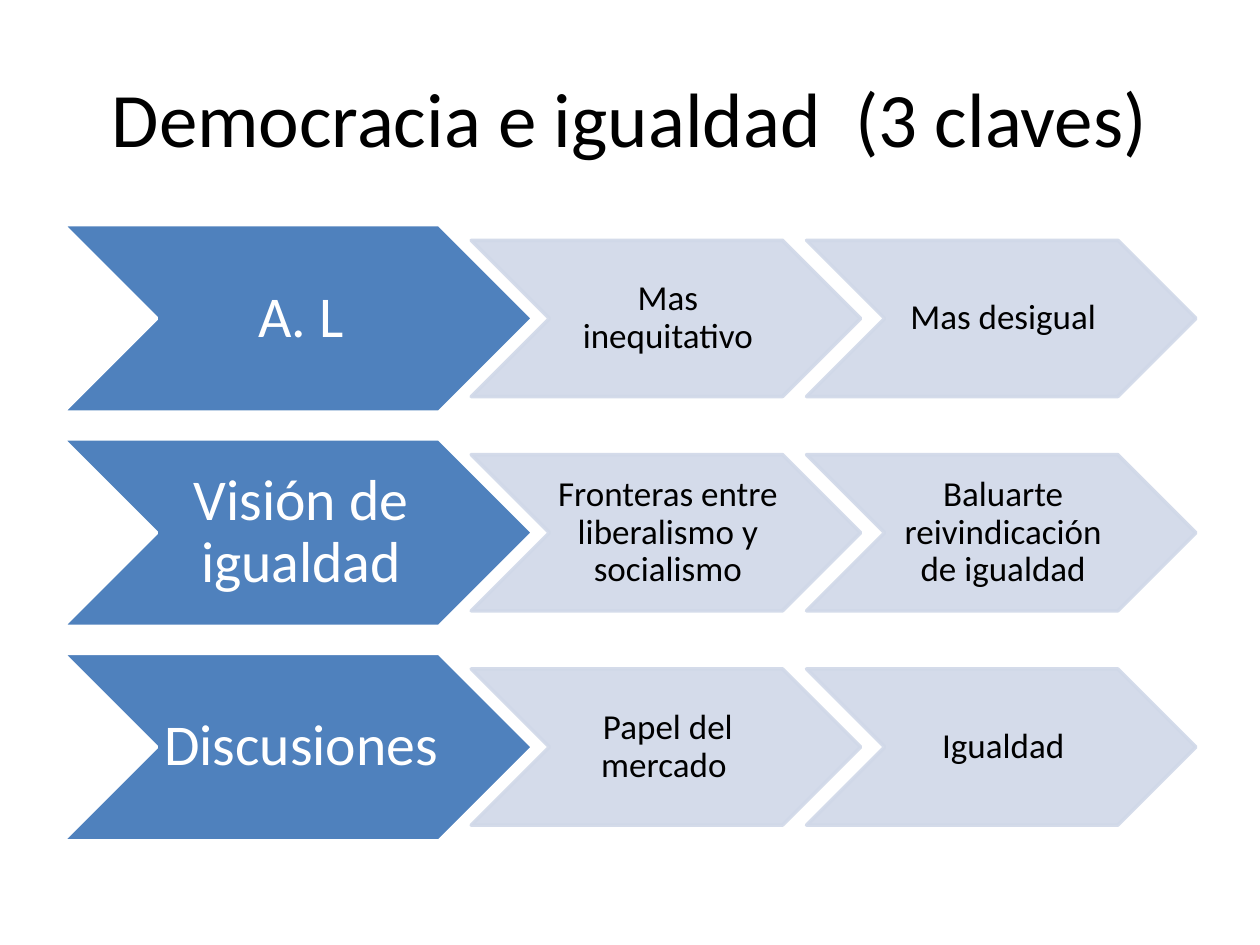
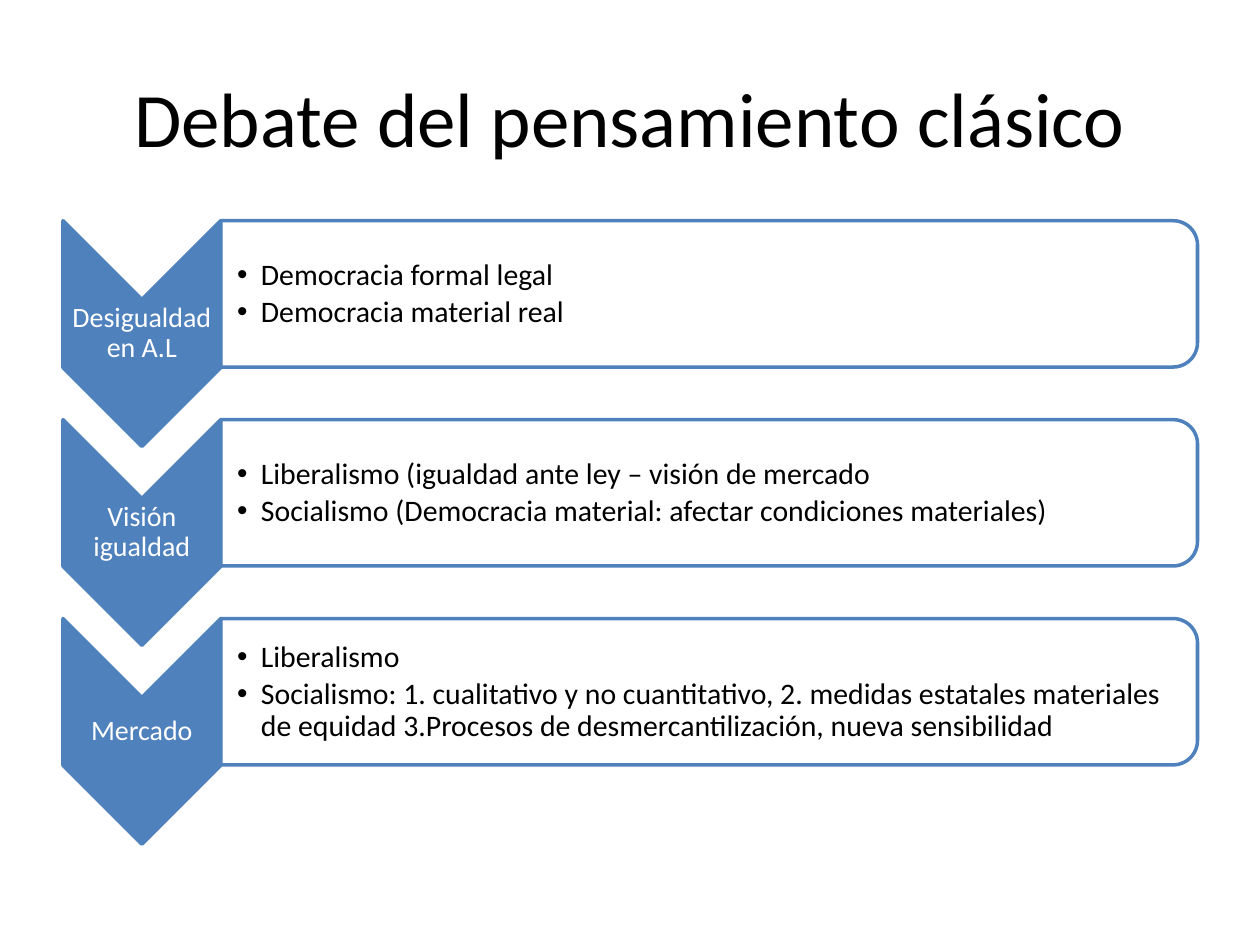
from lxml import etree
from pptx import Presentation
from pptx.dml.color import RGBColor
from pptx.enum.shapes import MSO_SHAPE
from pptx.enum.text import MSO_ANCHOR, PP_ALIGN
from pptx.oxml.ns import qn
from pptx.util import Cm, Pt

CHEVRON = MSO_SHAPE.CHEVRON
PANEL = MSO_SHAPE.ROUND_2_SAME_RECTANGLE
MIDDLE = MSO_ANCHOR.MIDDLE
CENTER = PP_ALIGN.CENTER
LEFT = PP_ALIGN.LEFT

FONT = "Calibri"
BLUE = "4F81BD"
PALE = "D0D8E8"
WHITE = "FFFFFF"
BLACK = "000000"
EDGE = 1.27

CLAIMS = [
    ("A. L", ["Mas inequitativo", "Mas desigual"]),
    ("Visión de igualdad", ["Fronteras entre liberalismo y socialismo",
                            "Baluarte reivindicación de igualdad"]),
    ("Discusiones", ["Papel del mercado ", "Igualdad"]),
]
DEBATES = [
    ("Desigualdad en A.L", ["Democracia formal legal",
                            "Democracia material real"]),
    ("Visión igualdad", [
        "Liberalismo (igualdad ante ley – visión de mercado",
        "Socialismo (Democracia material: afectar condiciones materiales)"]),
    ("Mercado", [
        "Liberalismo",
        "Socialismo: 1. cualitativo y no cuantitativo, 2. medidas estatales "
        "materiales de equidad 3.Procesos de desmercantilización, "
        "nueva sensibilidad"]),
]


def paint(fmt, color, alpha=100):
    fmt.solid()
    fmt.fore_color.rgb = RGBColor.from_string(color)
    if alpha < 100:
        tint = fmt.fore_color._xFill.find(qn("a:srgbClr"))
        etree.SubElement(tint, qn("a:alpha"), val=str(alpha * 1000))


def add_form(slide, kind, x, y, w, h, fill, line, alpha=100, fade=100, turn=False):
    if turn:
        x, y, w, h = x + (w - h) / 2, y + (h - w) / 2, h, w
    form = slide.shapes.add_shape(kind, Cm(x), Cm(y), Cm(w), Cm(h))
    form.rotation = 90 if turn else 0
    form.shadow.inherit = False
    paint(form.fill, fill, alpha)
    paint(form.line.fill, line, fade)
    form.line.width = Pt(2)


def add_text(slide, x, y, w, h, lines, size, color, pads,
             align=CENTER, lead=0.9, after=0.35):
    frame = slide.shapes.add_textbox(Cm(x), Cm(y), Cm(w), Cm(h)).text_frame
    frame.word_wrap = True
    frame.vertical_anchor = MIDDLE
    frame.margin_left, frame.margin_top, frame.margin_right, frame.margin_bottom = map(Cm, pads)
    frame.text = "\n".join(lines)
    for par in frame.paragraphs:
        par.alignment = align
        par.line_spacing = lead
        par.space_after = Pt(size * after)
        for run in par.runs:
            run.font.name = FONT
            run.font.size = Pt(size)
            run.font.color.rgb = RGBColor.from_string(color)
    return frame


def add_dots(frame, indent):
    for par in frame.paragraphs:
        props = par._p.get_or_add_pPr()
        props.set("marL", str(Cm(indent)))
        props.set("indent", str(-Cm(indent)))
        etree.SubElement(props, qn("a:buFont"), typeface="Arial")
        etree.SubElement(props, qn("a:buChar"), char="•")


def add_page(deck, title):
    slide = deck.slides.add_slide(deck.slide_layouts[6])
    add_text(slide, EDGE, 0.76, 22.86, 3.18, [title], 44, BLACK,
             (0.25, 0.13, 0.25, 0.13), lead=1.0, after=0)
    return slide


def add_step(slide, x, y, w, h, text, size, color, pads, fill, line, alpha=100):
    add_form(slide, CHEVRON, x, y, w, h, fill, line, alpha, alpha)
    add_text(slide, x + h / 2, y, w - h, h, [text], size, color, pads)


def add_claim(slide, y, head, steps):
    tall, low = 3.78, 3.15
    add_step(slide, EDGE, y, 9.47, tall, head, 33, WHITE,
             (0.13, 0.05, 0, 0.05), BLUE, WHITE)
    for col, step in enumerate(steps):
        add_step(slide, 9.5 + col * 6.76, y + (tall - low) / 2, 7.85, low,
                 step, 20, BLACK, (0.08, 0.03, 0, 0.03), PALE, PALE, 90)


def add_debate(slide, y, head, points):
    wide, tall = 3.18, 4.55
    add_form(slide, CHEVRON, EDGE, y, wide, tall, BLUE, BLUE, turn=True)
    add_text(slide, EDGE, y + wide / 2, wide, tall - wide, [head], 16, WHITE,
             (0.03, 0.03, 0.03, 0.03))
    left = EDGE + wide
    add_form(slide, PANEL, left, y, 19.69, 2.95, WHITE, BLUE, 90, turn=True)
    frame = add_text(slide, left, y + 0.15, 19.53, 2.67, points, 17, BLACK,
                     (0.33, 0.03, 0.03, 0.03), LEFT, after=0.15)
    add_dots(frame, 0.48)


def main():
    deck = Presentation()
    deck.slide_width, deck.slide_height = Cm(25.4), Cm(19.05)
    slide = add_page(deck, "Democracia e igualdad  (3 claves)")
    for row, (head, steps) in enumerate(CLAIMS):
        add_claim(slide, 4.53 + row * 4.32, head, steps)
    slide = add_page(deck, "Debate del pensamiento clásico")
    for row, (head, points) in enumerate(DEBATES):
        add_debate(slide, 4.45 + row * 4.01, head, points)
    deck.save("out.pptx")


if __name__ == "__main__":
    main()
